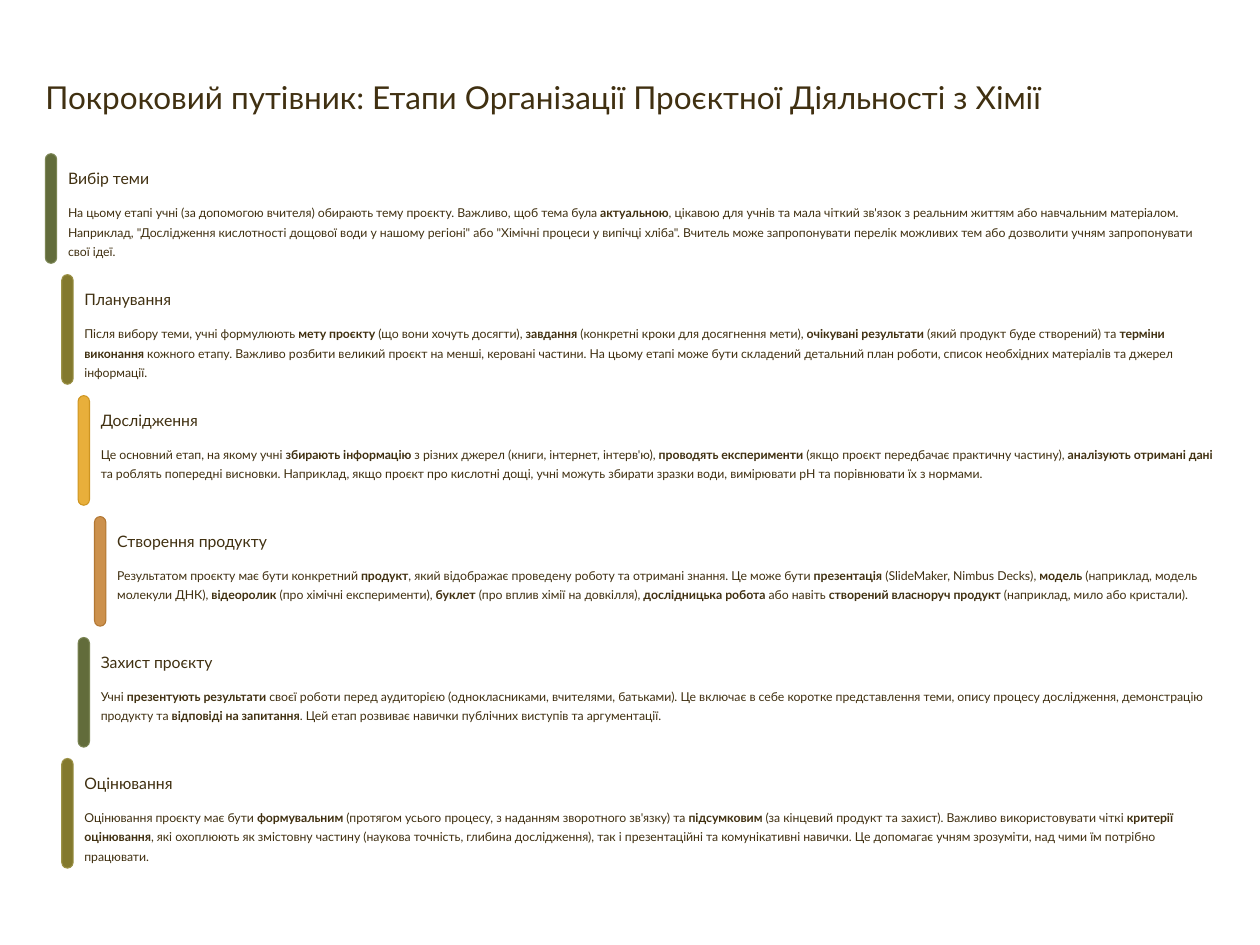
from pptx import Presentation
from pptx.dml.color import RGBColor
from pptx.enum.shapes import MSO_SHAPE
from pptx.enum.text import MSO_ANCHOR, MSO_AUTO_SIZE, PP_ALIGN
from pptx.util import Inches, Pt

FONT = "Lato"
INK = RGBColor(0x40, 0x30, 0x11)
# Fill and outline of a bar
GREEN = RGBColor(0x62, 0x6C, 0x3B), RGBColor(0x7B, 0x85, 0x54)
OLIVE = RGBColor(0x83, 0x79, 0x2E), RGBColor(0x9C, 0x92, 0x47)
YELLOW = RGBColor(0xE8, 0xAF, 0x3B), RGBColor(0xCE, 0x95, 0x21)
ORANGE = RGBColor(0xCC, 0x91, 0x4D), RGBColor(0xB2, 0x77, 0x33)

WIDTH, HEIGHT = Inches(10), Inches(7.5)
MARGIN = Inches(0.36)
INDENT = Inches(0.13)
STAGES_TOP = Inches(1.22)
ROW_PITCH, ROW_HEIGHT = Inches(0.96), Inches(0.87)

TITLE = "Покроковий путівник: Етапи Організації Проєктної Діяльності з Хімії"
# Indent level, bar colours, heading, description with **bold** parts
STAGES = [
    (0, GREEN, "Вибір теми",
     "На цьому етапі учні (за допомогою вчителя) обирають тему проєкту. Важливо, щоб тема була "
     "**актуальною**, цікавою для учнів та мала чіткий зв'язок з реальним життям або навчальним "
     "матеріалом. Наприклад, \"Дослідження кислотності дощової води у нашому регіоні\" або "
     "\"Хімічні процеси у випічці хліба\". Вчитель може запропонувати перелік можливих тем або "
     "дозволити учням запропонувати свої ідеї."),
    (1, OLIVE, "Планування",
     "Після вибору теми, учні формулюють **мету проєкту** (що вони хочуть досягти), **завдання** "
     "(конкретні кроки для досягнення мети), **очікувані результати** (який продукт буде "
     "створений) та **терміни виконання** кожного етапу. Важливо розбити великий проєкт на менші, "
     "керовані частини. На цьому етапі може бути складений детальний план роботи, список "
     "необхідних матеріалів та джерел інформації."),
    (2, YELLOW, "Дослідження",
     "Це основний етап, на якому учні **збирають інформацію** з різних джерел (книги, інтернет, "
     "інтерв'ю), **проводять експерименти** (якщо проєкт передбачає практичну частину), "
     "**аналізують отримані дані** та роблять попередні висновки. Наприклад, якщо проєкт про "
     "кислотні дощі, учні можуть збирати зразки води, вимірювати pH та порівнювати їх з нормами."),
    (3, ORANGE, "Створення продукту",
     "Результатом проєкту має бути конкретний **продукт**, який відображає проведену роботу та "
     "отримані знання. Це може бути **презентація** (SlideMaker, Nimbus Decks), **модель** "
     "(наприклад, модель молекули ДНК), **відеоролик** (про хімічні експерименти), **буклет** "
     "(про вплив хімії на довкілля), **дослідницька робота** або навіть **створений власноруч "
     "продукт** (наприклад, мило або кристали)."),
    (2, GREEN, "Захист проєкту",
     "Учні **презентують результати** своєї роботи перед аудиторією (однокласниками, вчителями, "
     "батьками). Це включає в себе коротке представлення теми, опису процесу дослідження, "
     "демонстрацію продукту та **відповіді на запитання**. Цей етап розвиває навички публічних "
     "виступів та аргументації."),
    (1, OLIVE, "Оцінювання",
     "Оцінювання проєкту має бути **формувальним** (протягом усього процесу, з наданням "
     "зворотного зв'язку) та **підсумковим** (за кінцевий продукт та захист). Важливо "
     "використовувати чіткі **критерії оцінювання**, які охоплюють як змістовну частину (наукова "
     "точність, глибина дослідження), так і презентаційні та комунікативні навички. Це допомагає "
     "учням зрозуміти, над чими їм потрібно працювати."),
]


def write_text(sp, text, size, leading, wrap=False):
    """Fill a shape with one paragraph, setting **marked** parts in bold."""
    tf = sp.text_frame
    tf.margin_left = tf.margin_right = tf.margin_top = tf.margin_bottom = 0
    tf.word_wrap = wrap
    tf.auto_size = MSO_AUTO_SIZE.NONE
    tf.vertical_anchor = MSO_ANCHOR.TOP
    p = tf.paragraphs[0]
    p.alignment = PP_ALIGN.LEFT
    p.line_spacing = Pt(leading)
    for i, part in enumerate(text.split("**")):
        r = p.add_run()
        r.text = part
        r.font.name = FONT
        r.font.size = Pt(size)
        r.font.bold = i % 2 == 1
        r.font.color.rgb = INK


def place_title(s, left, top, width, height):
    sp = s.shapes.title
    sp.left, sp.top, sp.width, sp.height = left, top, width, height
    write_text(sp, TITLE, 18, 22.1)


def add_stage(s, left, top, width, height, colors, heading, description):
    """Draw a coloured bar with a heading and a description to its right."""
    fill, line = colors
    bar = s.shapes.add_shape(MSO_SHAPE.ROUNDED_RECTANGLE, left, top, Inches(0.09), height)
    bar.adjustments[0] = 0.5
    bar.shadow.inherit = False
    bar.fill.solid()
    bar.fill.fore_color.rgb = fill
    bar.line.color.rgb = line
    bar.line.width = Pt(0.6)

    text_left = left + Inches(0.18)
    sp = s.shapes.add_textbox(text_left, top + Inches(0.12), Inches(1.11), Inches(0.19))
    write_text(sp, heading, 9, 10.8)
    sp = s.shapes.add_textbox(text_left, top + Inches(0.37),
                              left + width - text_left, Inches(0.38))
    write_text(sp, description, 7, 11.2, wrap=True)


def main():
    prs = Presentation()
    prs.slide_width, prs.slide_height = WIDTH, HEIGHT
    s = prs.slides.add_slide(prs.slide_layouts[5])
    place_title(s, MARGIN, Inches(0.61), Inches(8.2), Inches(0.37))
    for row, (level, colors, heading, description) in enumerate(STAGES):
        left = MARGIN + level * INDENT
        add_stage(s, left, STAGES_TOP + row * ROW_PITCH, WIDTH - MARGIN - left, ROW_HEIGHT,
                  colors, heading, description)
    prs.save("out.pptx")


if __name__ == "__main__":
    main()
